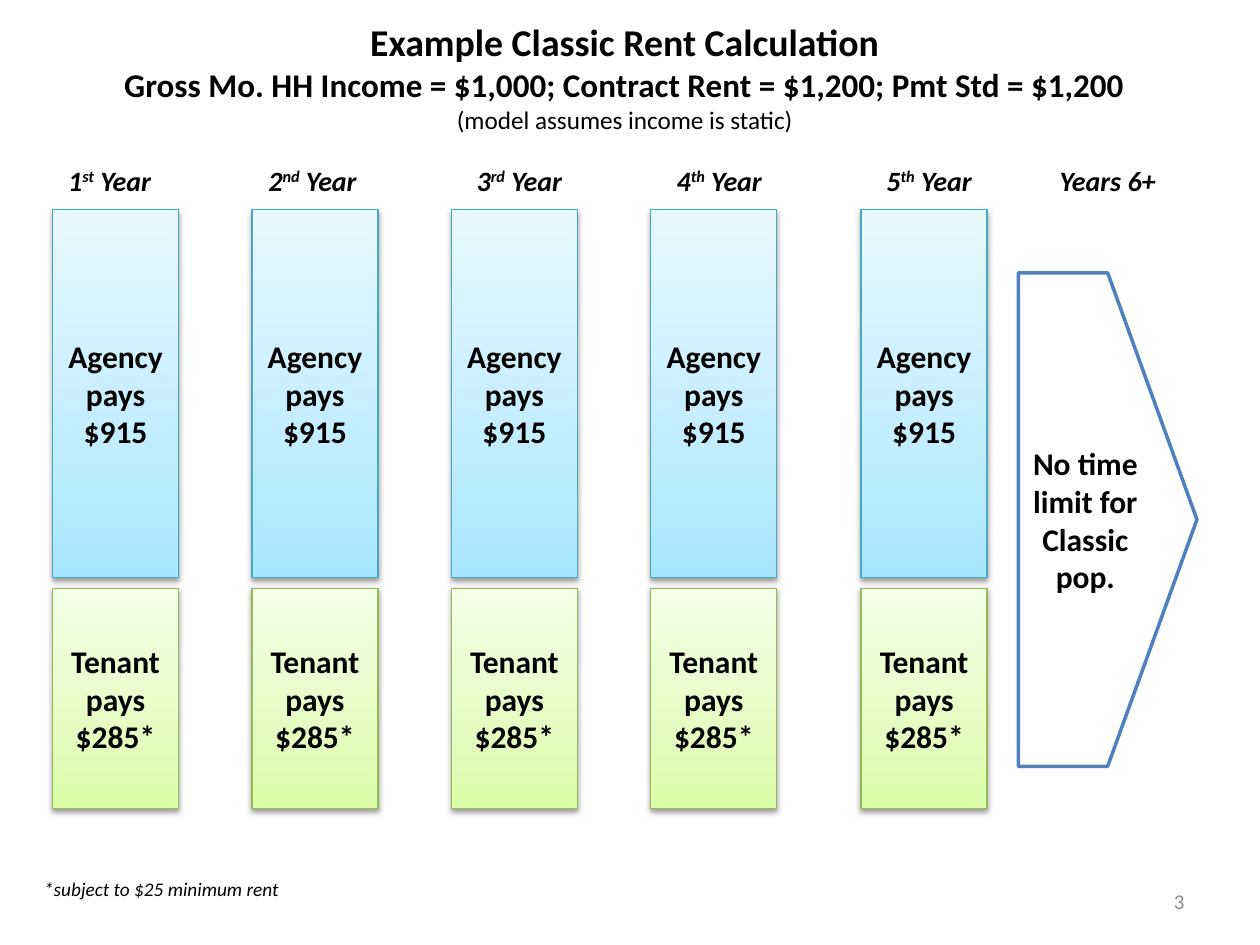
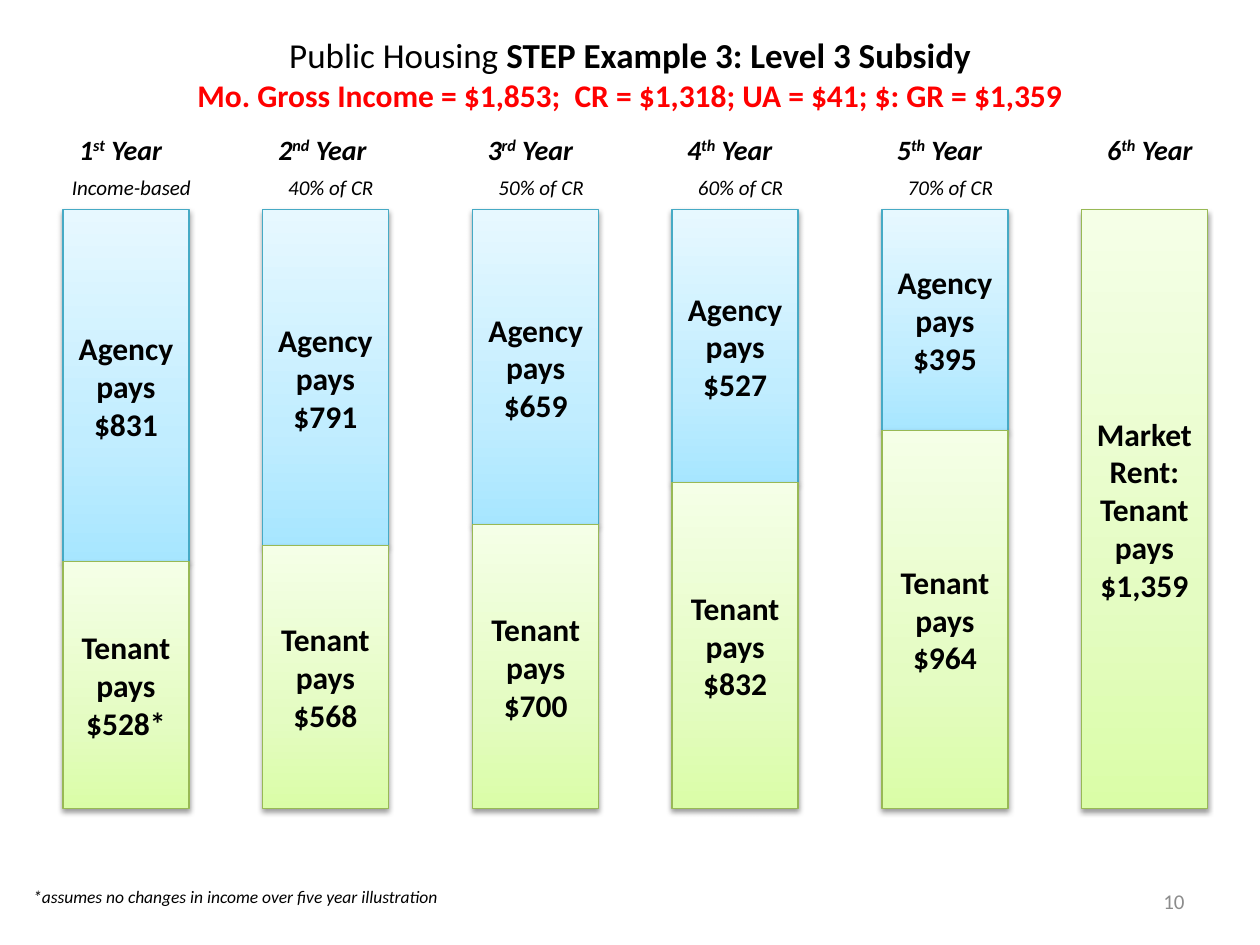
import copy
from dataclasses import dataclass

import pptx
import pptx.dml.color
import pptx.enum.shapes
import pptx.enum.text
import pptx.oxml
import pptx.oxml.ns
import pptx.presentation
import pptx.shapes.autoshape
import pptx.slide
import pptx.text.text
import pptx.util

ALIGN = pptx.enum.text.PP_ALIGN
ANCHOR = pptx.enum.text.MSO_ANCHOR
SHAPE = pptx.enum.shapes.MSO_SHAPE

# Shared look; all lengths in centimetres
FONT = "Calibri"
BLACK, RED, GREY, WHITE, ARROW_BLUE = "000000", "FF0000", "8C8C8C", "FFFFFF", "4F81BD"
BAR_TOP, BAR_BOTTOM, BAR_WIDTH = 4.23, 16.3, 2.54
YEAR_WIDTH, YEAR_HEIGHT = 4.02, 0.94
NOTE_TOP, NOTE_WIDTH, NOTE_HEIGHT, NOTE_OVERHANG = 3.39, 3.18, 0.77, 0.21
NUMBER_BOX = (18.21, 17.65, 5.92, 1.02)
SHADOW = (
    f'<a:outerShdw {pptx.oxml.ns.nsdecls("a")} blurRad="40000" dist="20000" '
    'dir="5400000" rotWithShape="0"><a:srgbClr val="000000">'
    '<a:alpha val="38000"/></a:srgbClr></a:outerShdw>'
)

Box = tuple[float, float, float, float]


@dataclass(frozen=True)
class Span:
    text: str
    size: float
    bold: bool = False
    italic: bool = False
    color: str = BLACK
    raised: bool = False


@dataclass(frozen=True)
class Payer:
    label: str
    stops: tuple[tuple[float, str], ...]
    outline: str


@dataclass(frozen=True)
class Year:
    ordinal: str
    suffix: str
    label_left: float
    bar_left: float
    subsidy: str
    tenant: str
    subsidy_height: float
    note: str = ""


@dataclass(frozen=True)
class Footnote:
    text: str
    size: float
    box: Box


AGENCY = Payer("Agency pays", ((0, "A7E6FF"), (0.35, "C1EDFF"), (1, "E7F8FF")), "46AAC5")
TENANT = Payer("Tenant pays", ((0, "DAFDA7"), (0.35, "E4FCC2"), (1, "F5FFE7")), "98B955")
MARKET = Payer("Market Rent: Tenant pays", TENANT.stops, TENANT.outline)

CLASSIC_YEARS = [
    Year(ordinal, suffix, label_left, bar_left, "$915", "$285*", 7.41)
    for ordinal, suffix, label_left, bar_left in (
        ("1", "st", 0.2, 1.06),
        ("2", "nd", 4.29, 5.08),
        ("3", "rd", 8.46, 9.1),
        ("4", "th", 12.49, 13.12),
        ("5", "th", 16.72, 17.36),
    )
]
STEP_YEARS = [
    Year("1", "st", 0.42, 1.27, "$831", "$528*", 7.09, "Income-based"),
    Year("2", "nd", 4.49, 5.29, "$791", "$568", 6.77, "40% of CR"),
    Year("3", "rd", 8.68, 9.53, "$659", "$700", 6.35, "50% of CR"),
    Year("4", "th", 12.7, 13.55, "$527", "$832", 5.5, "60% of CR"),
    Year("5", "th", 16.93, 17.78, "$395", "$964", 4.45, "70% of CR"),
    Year("6", "th", 21.17, 21.8, "", "$1,359", 0),
]


def rgb(color: str) -> pptx.dml.color.RGBColor:
    return pptx.dml.color.RGBColor.from_string(color)


def lengths(box: Box) -> list[pptx.util.Cm]:
    return [pptx.util.Cm(length) for length in box]


def write(frame: pptx.text.text.TextFrame, lines: list[list[Span]],
          align: ALIGN, anchor: ANCHOR) -> None:
    """Fill a frame, one paragraph per line of spans."""
    frame.word_wrap = True
    frame.vertical_anchor = anchor
    for index, line in enumerate(lines):
        paragraph = frame.add_paragraph() if index else frame.paragraphs[0]
        paragraph.alignment = align
        for span in line:
            run = paragraph.add_run()
            run.text = span.text
            font = run.font
            font.name, font.size = FONT, pptx.util.Pt(span.size)
            font.bold, font.italic = span.bold, span.italic
            font.color.rgb = rgb(span.color)
            if span.raised:
                run._r.get_or_add_rPr().set("baseline", "30000")


def add_text(slide: pptx.slide.Slide, box: Box, lines: list[list[Span]],
             align: ALIGN = ALIGN.CENTER, anchor: ANCHOR = ANCHOR.TOP) -> None:
    write(slide.shapes.add_textbox(*lengths(box)).text_frame, lines, align, anchor)


def add_block(slide: pptx.slide.Slide, kind: SHAPE, box: Box, lines: list[str],
              outline: str, weight: float) -> pptx.shapes.autoshape.Shape:
    """Outlined white shape with bold centred lines."""
    block = slide.shapes.add_shape(kind, *lengths(box))
    block.shadow.inherit = False
    block.fill.solid()
    block.fill.fore_color.rgb = rgb(WHITE)
    block.line.color.rgb = rgb(outline)
    block.line.width = pptx.util.Pt(weight)
    spans = [[Span(line, 18, bold=True)] for line in lines]
    write(block.text_frame, spans, ALIGN.CENTER, ANCHOR.MIDDLE)
    return block


def add_bar(slide: pptx.slide.Slide, payer: Payer, amount: str,
            left: float, top: float, height: float) -> None:
    bar = add_block(slide, SHAPE.RECTANGLE, (left, top, BAR_WIDTH, height),
                    [payer.label, amount], payer.outline, 0.75)
    properties = bar._element.spPr
    # Three-stop gradient, darkest at the foot
    bar.fill.gradient()
    bar.fill.gradient_angle = 90
    stop_list = properties.find(".//" + pptx.oxml.ns.qn("a:gsLst"))
    stop_list.insert(1, copy.deepcopy(stop_list[0]))
    for stop, (position, color) in zip(bar.fill.gradient_stops, payer.stops):
        stop.position = position
        stop.color.rgb = rgb(color)
    # Soft drop shadow
    effects = properties.find(pptx.oxml.ns.qn("a:effectLst"))
    effects.append(pptx.oxml.parse_xml(SHADOW))


def add_year(slide: pptx.slide.Slide, year: Year, label_top: float, gap: float) -> None:
    """Heading, optional note and the stacked payments of one year."""
    heading = [
        Span(year.ordinal, 16, bold=True, italic=True),
        Span(year.suffix, 16, bold=True, italic=True, raised=True),
        Span(" Year", 16, bold=True, italic=True),
    ]
    add_text(slide, (year.label_left, label_top, YEAR_WIDTH, YEAR_HEIGHT), [heading])
    if year.note:
        note_box = (year.bar_left - NOTE_OVERHANG, NOTE_TOP, NOTE_WIDTH, NOTE_HEIGHT)
        add_text(slide, note_box, [[Span(year.note, 12, italic=True)]])
    if year.subsidy:
        add_bar(slide, AGENCY, year.subsidy, year.bar_left, BAR_TOP, year.subsidy_height)
        tenant_top = BAR_TOP + year.subsidy_height + gap
        add_bar(slide, TENANT, year.tenant, year.bar_left, tenant_top, BAR_BOTTOM - tenant_top)
    else:
        add_bar(slide, MARKET, year.tenant, year.bar_left, BAR_TOP, BAR_BOTTOM - BAR_TOP)


def add_rent_slide(deck: pptx.presentation.Presentation, title: list[list[Span]],
                   title_box: Box, years: list[Year], label_top: float, gap: float,
                   footnote: Footnote, number: int) -> pptx.slide.Slide:
    slide = deck.slides.add_slide(deck.slide_layouts[6])
    add_text(slide, title_box, title, anchor=ANCHOR.MIDDLE)
    for year in years:
        add_year(slide, year, label_top, gap)
    add_text(slide, footnote.box, [[Span(footnote.text, footnote.size, italic=True)]],
             ALIGN.LEFT)
    add_text(slide, NUMBER_BOX, [[Span(str(number), 12, color=GREY)]],
             ALIGN.RIGHT, ANCHOR.MIDDLE)
    return slide


def main() -> None:
    deck = pptx.Presentation()
    deck.slide_width, deck.slide_height = pptx.util.Cm(25.4), pptx.util.Cm(19.05)

    # Classic rent: constant shares, no time limit
    classic_label_top = 3.17
    classic = add_rent_slide(
        deck,
        [
            [Span("Example Classic Rent Calculation", 21.6, bold=True)],
            [Span("Gross Mo. HH Income = $1,000; Contract Rent = $1,200; "
                  "Pmt Std = $1,200", 18.9, bold=True)],
            [Span("(model assumes income is static)", 14.4)],
        ],
        (0.43, 0.56, 24.33, 1.98), CLASSIC_YEARS, classic_label_top, 0.22,
        Footnote("*subject to $25 minimum rent", 11, (0.64, 17.57, 22.23, 0.74)), 3,
    )
    add_text(classic, (20.32, classic_label_top, YEAR_WIDTH, YEAR_HEIGHT),
             [[Span("Years 6+", 16, bold=True, italic=True)]])
    add_block(classic, SHAPE.PENTAGON, (20.53, 5.5, 3.6, 9.95),
              ["No time limit for Classic", "pop."], ARROW_BLUE, 2)

    # STEP: subsidy shrinks until market rent
    add_rent_slide(
        deck,
        [
            [Span("Public Housing", 20),
             Span(" STEP Example 3: Level 3 Subsidy", 20, bold=True)],
            [Span("Mo. Gross Income = $1,853;  CR = $1,318; UA = $41; $: GR = $1,359",
                  18, bold=True, color=RED)],
        ],
        (0.64, 0.21, 24.13, 2.54), STEP_YEARS, 2.54, 0,
        Footnote("*assumes no changes in income over five year illustration", 10,
                 (0.42, 17.73, 22.65, 0.68)), 10,
    )

    deck.save("out.pptx")


if __name__ == "__main__":
    main()
